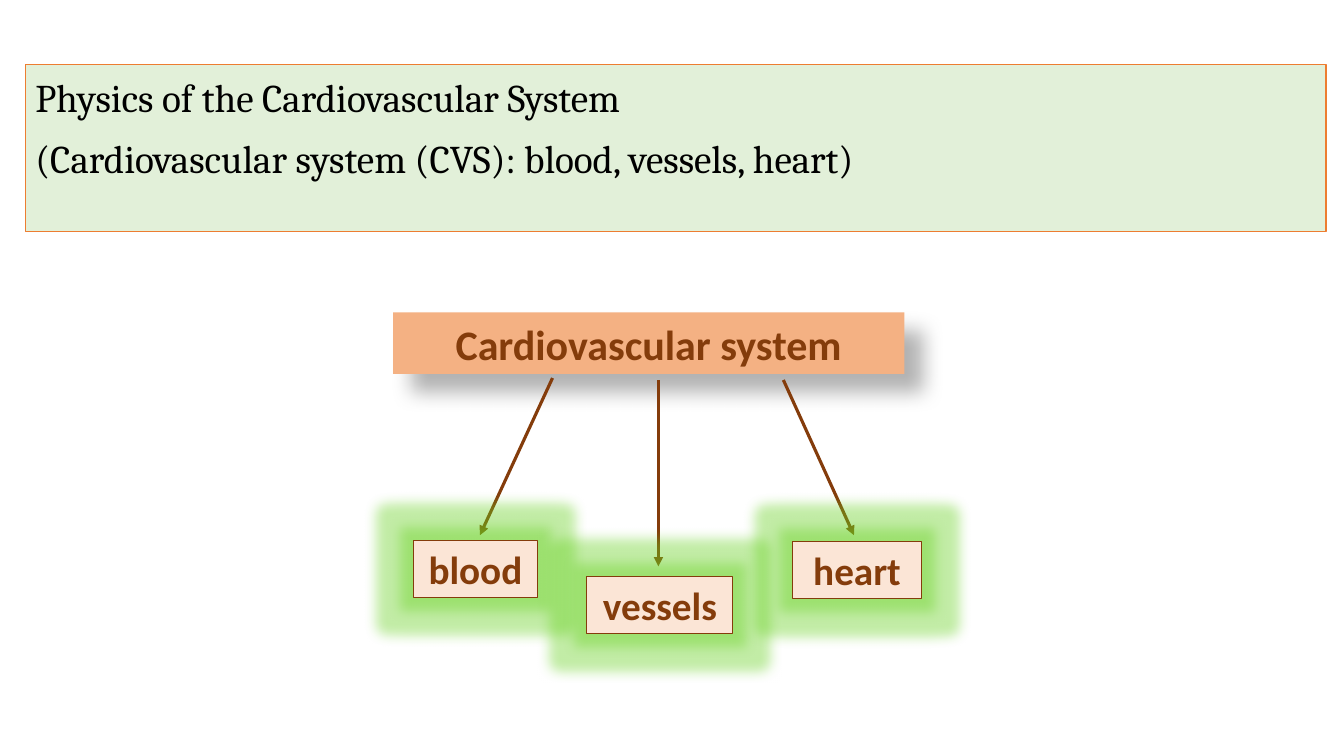
from dataclasses import dataclass

from lxml import etree
from pptx import Presentation
from pptx.dml.color import RGBColor
from pptx.enum.shapes import MSO_CONNECTOR, MSO_SHAPE
from pptx.enum.text import MSO_ANCHOR, MSO_AUTO_SIZE, PP_ALIGN
from pptx.oxml.ns import qn
from pptx.util import Inches, Pt

RECT = MSO_SHAPE.RECTANGLE
LINE = MSO_CONNECTOR.STRAIGHT
TOP, MIDDLE = MSO_ANCHOR.TOP, MSO_ANCHOR.MIDDLE
CENTER, JUSTIFY = PP_ALIGN.CENTER, PP_ALIGN.JUSTIFY
NO_FIT = MSO_AUTO_SIZE.NONE


@dataclass(frozen=True)
class Theme:
    serif: str = "Cambria"
    sans: str = "Calibri"
    ink: str = "000000"
    brown: str = "843C0B"
    mint: str = "E2F0D9"
    orange: str = "ED7D31"
    peach: str = "F4B183"
    cream: str = "FBE5D6"
    glow: str = "68D221"
    head: int = 28
    root: int = 30
    leaf: int = 28


THEME = Theme()


def paint(shape, fill, edge=None, width=1):
    shape.fill.solid()
    shape.fill.fore_color.rgb = RGBColor.from_string(fill)
    if edge:
        shape.line.color.rgb = RGBColor.from_string(edge)
        shape.line.width = Pt(width)
    else:
        shape.line.fill.background()


def write(para, text, face, size, color, bold=False):
    run = para.add_run()
    run.text = text
    run.font.name = face
    run.font.size = Pt(size)
    run.font.bold = bold
    run.font.color.rgb = RGBColor.from_string(color)


def effect(shape, kind=None, color=None, alpha=0, **attrs):
    """Give a shape one effect, or an empty list that turns effects off."""
    props = shape.element.spPr
    for old in props.findall(qn("a:effectLst")):
        props.remove(old)
    group = etree.SubElement(props, qn("a:effectLst"))
    if kind:
        node = etree.SubElement(group, qn(kind))
        for name, value in attrs.items():
            node.set(name, str(value))
        tone = etree.SubElement(node, qn("a:srgbClr"), val=color)
        etree.SubElement(tone, qn("a:alpha"), val=str(alpha * 1000))


def add_label(slide, box, text, size, fill, edge=None):
    label = slide.shapes.add_shape(RECT, *map(Inches, box))
    paint(label, fill, edge, 0.75)
    frame = label.text_frame
    frame.word_wrap = True
    frame.vertical_anchor = MIDDLE
    para = frame.paragraphs[0]
    para.alignment = CENTER
    write(para, text, THEME.sans, size, THEME.brown, True)
    return label


def add_arrow(slide, start, end):
    arrow = slide.shapes.add_connector(LINE, *map(Inches, start + end))
    arrow.line.color.rgb = RGBColor.from_string(THEME.brown)
    arrow.line.width = Pt(2.25)
    etree.SubElement(arrow.line._get_or_add_ln(), qn("a:tailEnd"), type="triangle")
    effect(arrow)


def add_head(slide, box, lines):
    title = slide.shapes.title
    title.left, title.top, title.width, title.height = map(Inches, box)
    paint(title, THEME.mint, THEME.orange)
    frame = title.text_frame
    frame.auto_size = NO_FIT
    frame.word_wrap = True
    frame.vertical_anchor = TOP
    for i, text in enumerate(lines):
        para = frame.add_paragraph() if i else frame.paragraphs[0]
        para.alignment = JUSTIFY
        para.line_spacing = 1.07
        para.space_before = Pt(0)
        para.space_after = Pt(8)
        write(para, text, THEME.serif, THEME.head, THEME.ink)


def add_tree(slide, box, root, leaves):
    left, top, width, height = box
    # Root with its drop shadow
    label = add_label(slide, (left, top, width, height), root,
                      THEME.root, THEME.peach)
    effect(label, "a:outerShdw", THEME.ink, 30, blurRad=Pt(15), dist=Pt(18),
           dir=45 * 60000, algn="tl", rotWithShape=0)
    # Arrows first, so that the glow falls over their tips
    for _, _, start, end in leaves:
        add_arrow(slide, *((left + x, top + y) for x, y in (start, end)))
    # Glowing leaves
    for text, (x, y, wide), _, _ in leaves:
        label = add_label(slide, (left + x, top + y, wide, 0.57), text,
                          THEME.leaf, THEME.cream, THEME.brown)
        effect(label, "a:glow", THEME.glow, 40, rad=Pt(18))


def main():
    deck = Presentation()
    deck.slide_width, deck.slide_height = Inches(13.33), Inches(7.5)
    slide = deck.slides.add_slide(deck.slide_layouts[5])
    add_head(slide, (0.25, 0.64, 12.9, 1.66), (
        "Physics of the Cardiovascular System",
        "(Cardiovascular system (CVS): blood, vessels, heart)",
    ))
    # Leaf: text, (left, top, width), arrow start, arrow end; from the root's corner
    add_tree(slide, (3.9, 3.1, 5.07, 0.61), "Cardiovascular system", (
        ("blood", (0.2, 2.26, 1.23), (1.58, 0.65), (0.86, 2.21)),
        ("vessels", (1.92, 2.62, 1.45), (2.63, 0.67), (2.63, 2.52)),
        ("heart", (3.96, 2.27, 1.28), (3.87, 0.67), (4.57, 2.21)),
    ))
    deck.save("out.pptx")


if __name__ == "__main__":
    main()
